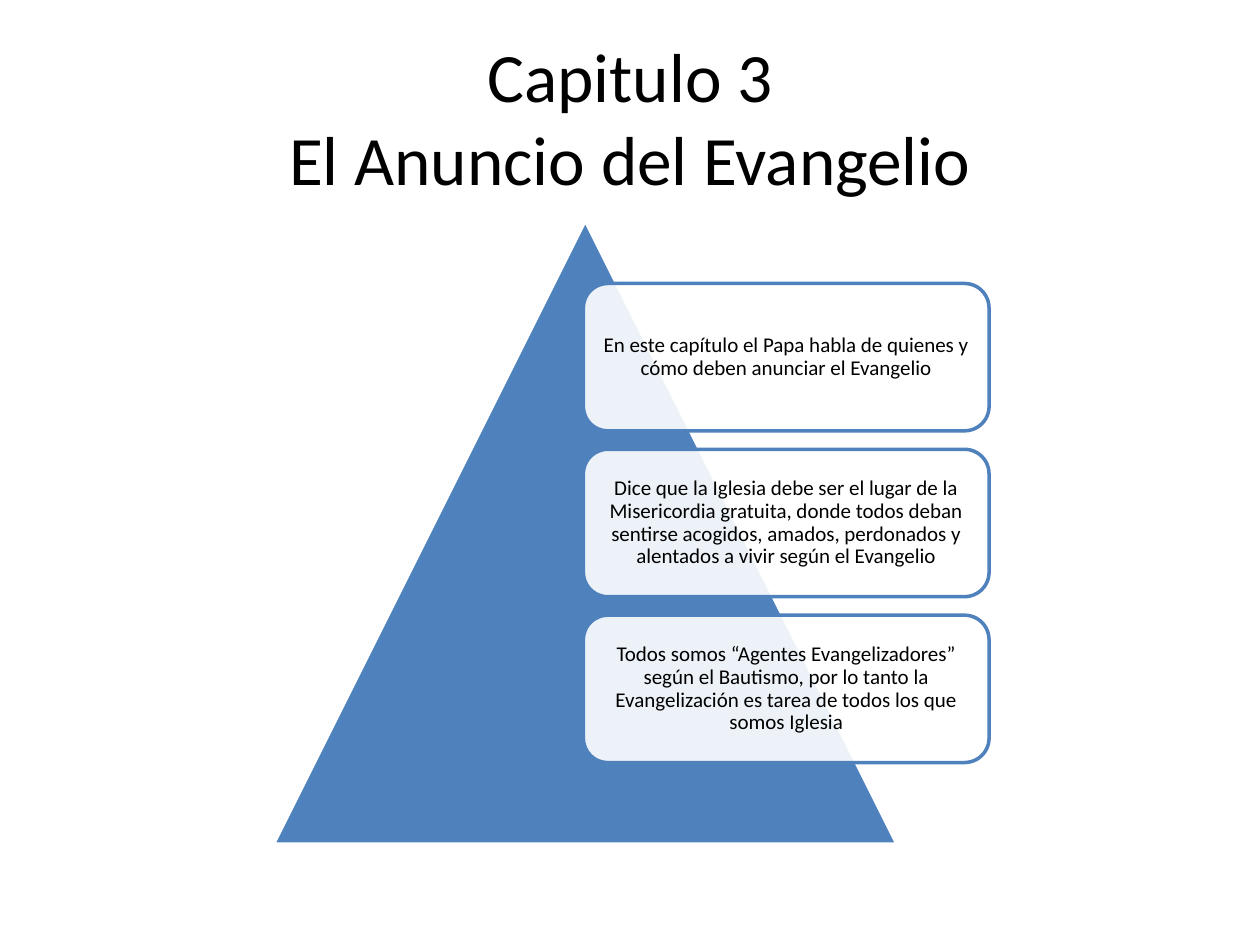
"""Builds the slide on chapter 3, with a pyramid and three rounded cards."""
from lxml import etree
from pptx import Presentation
from pptx.dml.color import RGBColor
from pptx.enum.shapes import MSO_SHAPE as Shape
from pptx.enum.text import MSO_ANCHOR as Anchor, PP_ALIGN as Align
from pptx.oxml.ns import qn
from pptx.util import Inches, Pt

TITLE = "Capitulo 3\vEl Anuncio del Evangelio"
CARDS = [
    "En este capítulo el Papa habla de quienes y cómo deben anunciar el Evangelio",
    "Dice que la Iglesia debe ser el lugar de la Misericordia gratuita, donde todos "
    "deban sentirse acogidos, amados, perdonados y alentados a vivir según el Evangelio",
    "Todos somos “Agentes Evangelizadores” según el Bautismo, por lo tanto la "
    "Evangelización es tarea de todos los que somos Iglesia",
]
BLUE, WHITE, BLACK = "4F81BD", "FFFFFF", "000000"
TITLE_BOX = (0.5, 0.3, 9, 1.25)
PYRAMID_BOX = (2.17, 1.75, 4.95, 4.95)
CARD_LEFT, CARD_TOP, CARD_WIDTH, CARD_HEIGHT = 4.63, 2.25, 3.22, 1.17
CARD_STEP = CARD_HEIGHT * 1.125
MARGIN = Inches(0.05)
CARD_FRAME = {"margin_left": MARGIN, "margin_right": MARGIN,
              "margin_top": MARGIN, "margin_bottom": MARGIN}


def color(value):
    return RGBColor.from_string(value)


def apply(target, values):
    for name, value in values.items():
        setattr(target, name, value)


def write(frame, text, size, frame_format, paragraph_format):
    apply(frame, {"word_wrap": True, "vertical_anchor": Anchor.MIDDLE, **frame_format})
    paragraph = frame.paragraphs[0]
    paragraph.text = text
    apply(paragraph, {"alignment": Align.CENTER, **paragraph_format})
    for run in paragraph.runs:
        apply(run.font, {"name": "Calibri", "size": Pt(size)})
        run.font.color.rgb = color(BLACK)


def add_figure(slide, kind, box, fill, line):
    figure = slide.shapes.add_shape(kind, *map(Inches, box))
    figure.shadow.inherit = False
    figure.fill.solid()
    figure.fill.fore_color.rgb = color(fill)
    figure.line.color.rgb = color(line)
    figure.line.width = Pt(2)
    return figure


def set_opacity(figure, percent):
    tint = figure.fill._xPr.find(qn("a:solidFill"))[0]
    etree.SubElement(tint, qn("a:alpha")).set("val", str(percent * 1000))


def main():
    deck = Presentation()
    apply(deck, {"slide_width": Inches(10), "slide_height": Inches(7.5)})
    slide = deck.slides.add_slide(deck.slide_layouts[6])

    title = slide.shapes.add_textbox(*map(Inches, TITLE_BOX))
    write(title.text_frame, TITLE, 39.6, {}, {})
    add_figure(slide, Shape.ISOSCELES_TRIANGLE, PYRAMID_BOX, BLUE, WHITE)

    for index, text in enumerate(CARDS):
        box = (CARD_LEFT, CARD_TOP + index * CARD_STEP, CARD_WIDTH, CARD_HEIGHT)
        card = add_figure(slide, Shape.ROUNDED_RECTANGLE, box, WHITE, BLUE)
        set_opacity(card, 90)
        write(card.text_frame, text, 12, CARD_FRAME, {"line_spacing": 0.9})

    deck.save("out.pptx")


if __name__ == "__main__":
    main()
